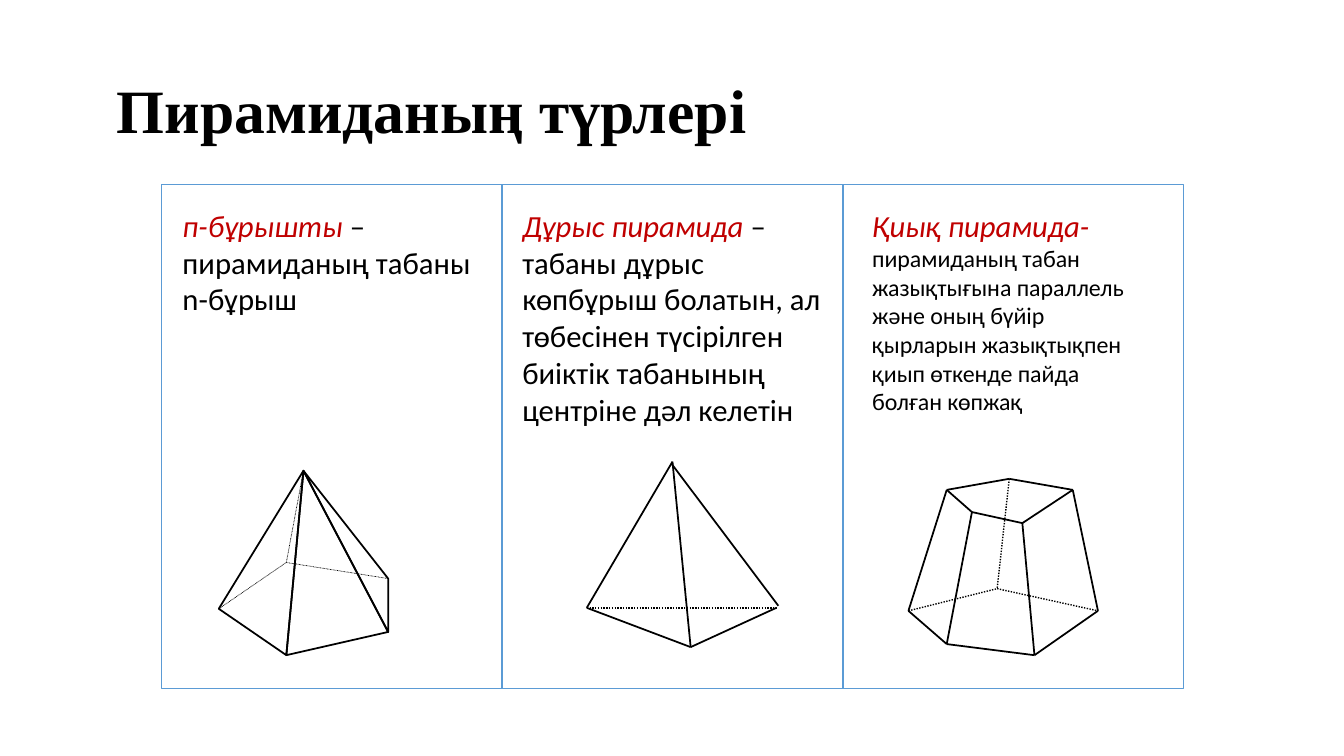
import pptx
import pptx.util
import pptx.dml.color
import pptx.enum.dml
import pptx.enum.shapes
import pptx.enum.text
import pptx.oxml.ns
import lxml.etree

PX = 9144
THEME = {
    "paper": "FFFFFF", "ink": "000000", "term": "C00000", "border": "5B9BD5",
    "title_font": "Times New Roman", "body_font": "Calibri",
    "title": 44, "body": 21.9, "small": 17.1,
    "frame": 1, "solid": 1.25, "hidden": 1, "thin": 0.5,
}

TITLE = "Пирамиданың түрлері"
TITLE_BOX = (92, 40, 1150, 145)
PANEL = {"left": 160, "top": 183, "width": 338, "height": 500}
DEFINITIONS = [
    ("п-бұрышты ", "– пирамиданың табаны n-бұрыш", "body", (170, 200, 338, 122)),
    ("Дұрыс пирамида ",
     "– табаны дұрыс көпбұрыш болатын, ал төбесінен түсірілген биіктік табанының центріне дәл келетін",
     "body", (507, 200, 328, 232)),
    ("Қиық пирамида- ",
     "пирамиданың табан жазықтығына параллель және оның бүйір қырларын жазықтықпен қиып өткенде пайда болған көпжақ",
     "small", (854, 200, 272, 250)),
]
SOLIDS = [
    {"points": {"S": (301, 467), "A": (217, 604), "B": (284, 650),
                "C": (385, 627), "D": (385, 574), "E": (284, 558)},
     "faces": ["BSA", "CSB", "CDS"],
     "edges": {"thin": ["SE", "EA", "ED"]}},
    {"points": {"S": (667, 458), "T": (666, 460), "A": (582, 603),
                "B": (685, 642), "C": (770, 603), "D": (772, 601)},
     "faces": [],
     "edges": {"hidden": ["AC"], "solid": ["CB", "AB", "AS", "DT", "BS"]}},
    {"points": {"A": (901, 606), "B": (939, 639), "C": (1026, 650),
                "D": (1089, 606), "E": (989, 584),
                "a": (939, 486), "b": (964, 508), "c": (1014, 519),
                "d": (1064, 486), "e": (1001, 475)},
     "faces": [],
     "edges": {"hidden": ["eE", "AE", "ED"],
               "solid": ["ab", "bc", "cd", "de", "ea", "AB", "BC", "CD",
                         "aA", "bB", "cC", "dD"]}},
]


def px(*lengths):
    return [length * PX for length in lengths]


def color(name):
    return pptx.dml.color.RGBColor.from_string(THEME[name])


def set_all(target, values):
    for name, value in values.items():
        setattr(target, name, value)


def style_line(line, color_name, weight):
    line.color.rgb = color(color_name)
    line.width = pptx.util.Pt(THEME[weight])
    if weight in ("hidden", "thin"):
        line.dash_style = pptx.enum.dml.MSO_LINE.ROUND_DOT


def add_run(paragraph, text, color_name, **font_values):
    run = paragraph.add_run()
    run.text = text
    run.font.color.rgb = color(color_name)
    set_all(run.font, font_values)


def add_panel(slide, index):
    left = PANEL["left"] + index * PANEL["width"]
    shape = slide.shapes.add_shape(
        pptx.enum.shapes.MSO_SHAPE.RECTANGLE,
        *px(left, PANEL["top"], PANEL["width"], PANEL["height"]))
    shape.shadow.inherit = False
    shape.fill.solid()
    shape.fill.fore_color.rgb = color("paper")
    style_line(shape.line, "border", "frame")


def add_title(slide):
    title = slide.shapes.title
    set_all(title, dict(zip(("left", "top", "width", "height"), px(*TITLE_BOX))))
    set_all(title.text_frame, {
        "word_wrap": True, "margin_left": 24 * PX,
        "vertical_anchor": pptx.enum.text.MSO_ANCHOR.MIDDLE})
    paragraph = title.text_frame.paragraphs[0]
    set_all(paragraph, {"alignment": pptx.enum.text.PP_ALIGN.LEFT, "line_spacing": 0.9})
    add_run(paragraph, TITLE, "ink", name=THEME["title_font"],
            size=pptx.util.Pt(THEME["title"]), bold=True)


def add_definition(slide, term, meaning, size, box):
    frame = slide.shapes.add_textbox(*px(*box)).text_frame
    set_all(frame, {"word_wrap": True, "margin_left": 11 * PX, "margin_right": 11 * PX,
                    "margin_top": 5 * PX, "margin_bottom": 5 * PX})
    paragraph = frame.paragraphs[0]
    add_run(paragraph, term, "term", name=THEME["body_font"],
            size=pptx.util.Pt(THEME["body"]), italic=True)
    add_run(paragraph, meaning, "ink", name=THEME["body_font"],
            size=pptx.util.Pt(THEME[size]), italic=False)


def add_solid(slide, points, faces, edges):
    for face in faces:
        start, *others = [points[name] for name in face]
        builder = slide.shapes.build_freeform(*start, scale=PX)
        builder.add_line_segments(others, close=True)
        shape = builder.convert_to_shape()
        shape.shadow.inherit = False
        shape.fill.background()
        style_line(shape.line, "ink", "solid")
    for weight, pairs in edges.items():
        for start, end in pairs:
            connector = slide.shapes.add_connector(
                pptx.enum.shapes.MSO_CONNECTOR.STRAIGHT,
                *px(*points[start], *points[end]))
            style_line(connector.line, "ink", weight)
            lxml.etree.SubElement(connector._element.spPr, pptx.oxml.ns.qn("a:effectLst"))


def main():
    presentation = pptx.Presentation()
    set_all(presentation, {"slide_width": 1333 * PX, "slide_height": 750 * PX})
    slide = presentation.slides.add_slide(presentation.slide_layouts.get_by_name("Title Only"))
    add_title(slide)
    for index in range(len(DEFINITIONS)):
        add_panel(slide, index)
    for definition in DEFINITIONS:
        add_definition(slide, *definition)
    for solid in SOLIDS:
        add_solid(slide, **solid)
    presentation.save("out.pptx")


if __name__ == "__main__":
    main()
